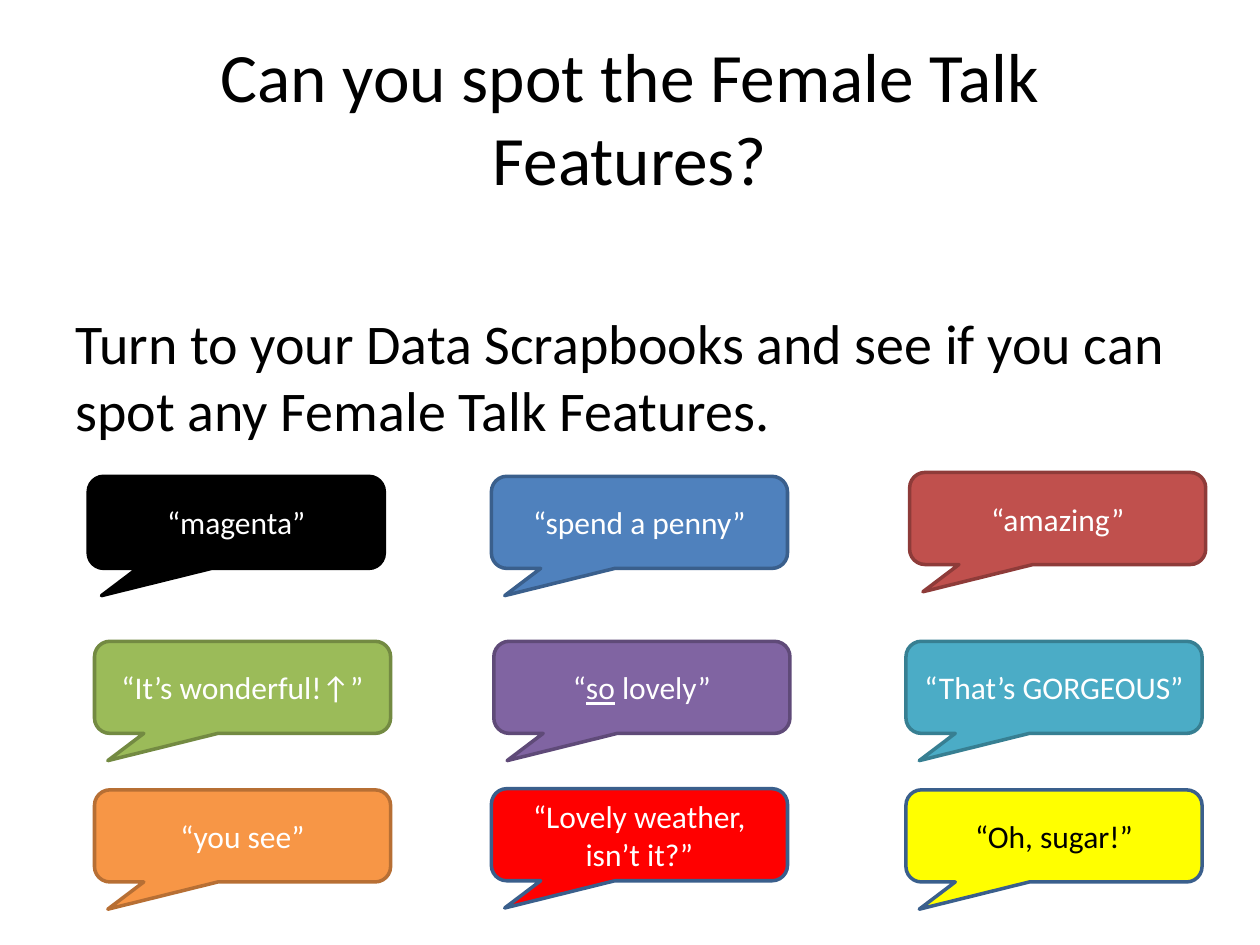
"""Build the Female Talk Features slide with its nine speech bubbles."""
from dataclasses import dataclass

from pptx import Presentation
from pptx.dml.color import RGBColor as Rgb
from pptx.enum.shapes import MSO_SHAPE as Shape
from pptx.enum.text import MSO_ANCHOR as Anchor, PP_ALIGN as Align
from pptx.util import Pt


@dataclass(frozen=True)
class Theme:
    font: str = "Calibri"
    head: float = 39.6
    body: float = 32
    talk: float = 18
    black: str = "000000"
    white: str = "FFFFFF"
    blue: str = "4F81BD"
    navy: str = "3A5F8C"
    red: str = "C0504D"
    wine: str = "8E3B39"
    green: str = "9BBB59"
    moss: str = "738A42"
    plum: str = "8064A2"
    grape: str = "5F4A78"
    aqua: str = "4BACC6"
    teal: str = "377F92"
    peach: str = "F79646"
    rust: str = "B76F34"
    fire: str = "FF0000"
    lemon: str = "FFFF00"


LOOK = Theme()
WIDE, HIGH = 169.2, 52.6
TAIL = (-0.455, 0.796, 0.167)
TALK = [
    (50.4, 272.2, "“magenta”", LOOK.black, LOOK.black),
    (280.8, 272.2, "“spend a penny”", LOOK.blue, LOOK.navy),
    (519.8, 270, "“amazing”", LOOK.red, LOOK.wine),
    (54, 366.5, "“It’s wonderful!↑”", LOOK.green, LOOK.moss),
    (282.2, 366.5, "“|so| lovely”", LOOK.plum, LOOK.grape),
    (517.7, 366.5, "“That’s GORGEOUS”", LOOK.aqua, LOOK.teal),
    (54, 451.4, "“you see”", LOOK.peach, LOOK.rust),
    (280.8, 450.7, "“Lovely weather, isn’t it?”", LOOK.fire, LOOK.navy),
    (517.7, 451.4, "“Oh, sugar!”", LOOK.lemon, LOOK.navy),
]


def write(frame, text, size, tint, align, anchor):
    """Fill a frame with one paragraph, underlining parts between bars."""
    frame.word_wrap = True
    frame.vertical_anchor = anchor
    para = frame.paragraphs[0]
    para.alignment = align
    para.font.name = LOOK.font
    para.font.size = Pt(size)
    para.font.color.rgb = Rgb.from_string(tint)
    for i, part in enumerate(text.split("|")):
        run = para.add_run()
        run.text = part
        if i % 2:
            run.font.underline = True


def label(slide, box, text, size, align, anchor, pad=7.2):
    """Add a text box with the given side padding."""
    frame = slide.shapes.add_textbox(*map(Pt, box)).text_frame
    frame.margin_left = frame.margin_right = Pt(pad)
    write(frame, text, size, LOOK.black, align, anchor)


def bubble(slide, left, top, text, fill, line):
    """Add a speech bubble with centred text."""
    shape = slide.shapes.add_shape(
        Shape.ROUNDED_RECTANGULAR_CALLOUT, Pt(left), Pt(top), Pt(WIDE), Pt(HIGH))
    for i, value in enumerate(TAIL):
        shape.adjustments[i] = value
    shape.shadow.inherit = False
    shape.fill.solid()
    shape.fill.fore_color.rgb = Rgb.from_string(fill)
    shape.line.color.rgb = Rgb.from_string(line)
    shape.line.width = Pt(2)
    tint = LOOK.black if fill == LOOK.lemon else LOOK.white
    write(shape.text_frame, text, LOOK.talk, tint, Align.CENTER, Anchor.MIDDLE)


def main():
    """Build and save the slide."""
    deck = Presentation()
    deck.slide_width, deck.slide_height = Pt(720), Pt(540)
    slide = deck.slides.add_slide(deck.slide_layouts[6])
    label(slide, (36, 21.6, 648, 90), "Can you spot the Female Talk Features?",
          LOOK.head, Align.CENTER, Anchor.MIDDLE, 14)
    label(slide, (36, 172.8, 648, 309.6),
          "Turn to your Data Scrapbooks and see if you can spot any Female Talk Features.",
          LOOK.body, Align.LEFT, Anchor.TOP)
    for item in TALK:
        bubble(slide, *item)
    deck.save("out.pptx")


if __name__ == "__main__":
    main()
